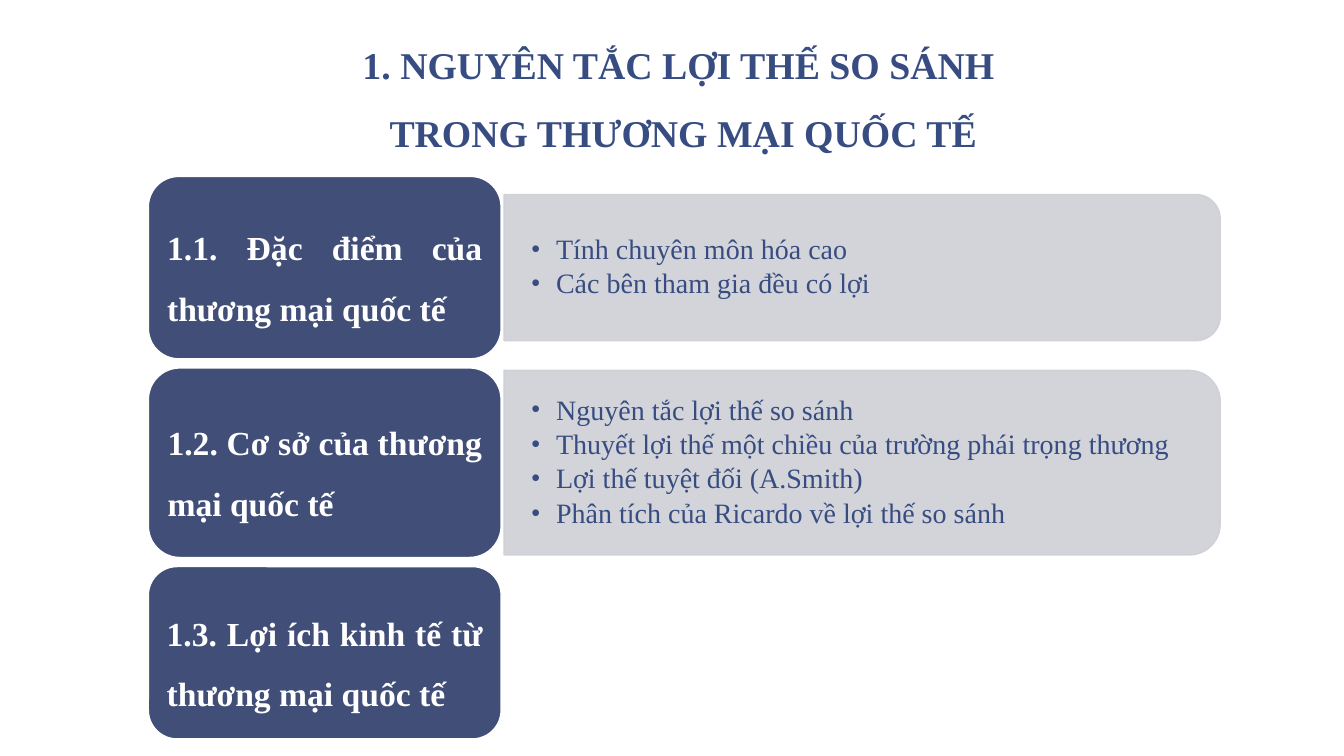
from copy import deepcopy
from dataclasses import dataclass

from lxml import etree
from pptx import Presentation
from pptx.dml.color import RGBColor
from pptx.enum.shapes import MSO_SHAPE
from pptx.enum.text import MSO_ANCHOR, MSO_AUTO_SIZE, PP_ALIGN
from pptx.oxml.ns import qn
from pptx.util import Pt

ROUNDED, ROUNDED_TOP = MSO_SHAPE.ROUNDED_RECTANGLE, MSO_SHAPE.ROUND_2_SAME_RECTANGLE
MIDDLE, BOTTOM = MSO_ANCHOR.MIDDLE, MSO_ANCHOR.BOTTOM
CENTER, JUSTIFY, LEFT = PP_ALIGN.CENTER, PP_ALIGN.JUSTIFY, PP_ALIGN.LEFT
NO_AUTOFIT = MSO_AUTO_SIZE.NONE


@dataclass(frozen=True)
class Theme:
    font: str = "Times New Roman"
    ink: str = "374C81"
    card: str = "414E77"
    panel: str = "CFD0D6"
    white: str = "FFFFFF"
    title_size: int = 27
    card_size: int = 24
    list_size: int = 20
    panel_alpha: int = 90


class SlideBuilder:
    def __init__(self, slide, theme):
        self.slide = slide
        self.theme = theme

    def format_frame(self, frame, anchor, side, end):
        frame.word_wrap = True
        frame.auto_size = NO_AUTOFIT
        frame.vertical_anchor = anchor
        frame.margin_left = frame.margin_right = Pt(side)
        frame.margin_top = frame.margin_bottom = Pt(end)

    def format_para(self, para, size, color, align, spacing, after=0, bold=False):
        para.alignment = align
        para.line_spacing = spacing
        para.space_before = Pt(0)
        para.space_after = Pt(after)
        for span in para.runs:
            span.font.name = self.theme.font
            span.font.size = Pt(size)
            span.font.bold = bold
            span.font.color.rgb = RGBColor.from_string(color)

    def place(self, shape, left, top, width, height):
        shape.left, shape.top = Pt(left), Pt(top)
        shape.width, shape.height = Pt(width), Pt(height)

    def box(self, kind, left, top, width, height, fill, line):
        box = self.slide.shapes.add_shape(kind, Pt(left), Pt(top), Pt(width), Pt(height))
        box.shadow.inherit = False
        box.fill.solid()
        box.fill.fore_color.rgb = RGBColor.from_string(fill)
        box.line.color.rgb = RGBColor.from_string(line)
        box.line.width = Pt(1)
        return box

    def title(self, text, left, top, width, height):
        title = self.slide.shapes.title
        self.place(title, left, top, width, height)
        frame = title.text_frame
        frame.text = text
        self.format_frame(frame, BOTTOM, 9.4, 5)
        para = frame.paragraphs[0]
        self.format_para(para, self.theme.title_size, self.theme.ink, CENTER, 1.5, bold=True)
        # The line break takes the same type as the words around it
        for line_break in para._p.findall(qn("a:br")):
            line_break.insert(0, deepcopy(para.runs[0]._r.rPr))

    def card(self, text, left, top, width, height):
        box = self.box(ROUNDED, left, top, width, height, self.theme.card, self.theme.white)
        box.text_frame.text = text
        self.format_frame(box.text_frame, MIDDLE, 7.2, 3.6)
        self.format_para(box.text_frame.paragraphs[0], self.theme.card_size,
                         self.theme.white, JUSTIFY, 1.5, after=8.4, bold=True)

    def panel(self, left, top, width, height):
        # Drawn upright, then turned so that the rounded end points right
        shift = (width - height) / 2
        box = self.box(ROUNDED_TOP, left + shift, top - shift, height, width,
                       self.theme.panel, self.theme.panel)
        box.rotation = 90
        for color in box._element.spPr.iter(qn("a:srgbClr")):
            etree.SubElement(color, qn("a:alpha"), val=str(self.theme.panel_alpha * 1000))

    def bullets(self, index, items, left, top, width, height):
        body = self.slide.placeholders[index]
        self.place(body, left, top, width, height)
        # Bring the list in front of its panel
        self.slide.shapes._spTree.append(body._element)
        frame = body.text_frame
        frame.text = "\n".join(items)
        self.format_frame(frame, MIDDLE, 19.2, 10)
        for para in frame.paragraphs:
            self.format_para(para, self.theme.list_size, self.theme.ink, LEFT, 0.9, after=3)
            properties = para._p.get_or_add_pPr()
            properties.set("marL", str(Pt(18)))
            properties.set("indent", str(Pt(-18)))
            etree.SubElement(properties, qn("a:buFont"), typeface=self.theme.font)
            etree.SubElement(properties, qn("a:buChar"), char="•")


# Card text, card height, panel height, list items
ROWS = [
    ("1.1. Đặc điểm của thương mại quốc tế", 130.3, 104.4,
     ["Tính chuyên môn hóa cao", "Các bên tham gia đều có lợi"]),
    ("1.2. Cơ sở của thương mại quốc tế", 135.4, 131.8,
     ["Nguyên tắc lợi thế so sánh",
      "Thuyết lợi thế một chiều của trường phái trọng thương",
      "Lợi thế tuyệt đối (A.Smith)",
      "Phân tích của Ricardo về lợi thế so sánh"]),
    ("1.3. Lợi ích kinh tế từ thương mại quốc tế", 123.1, 0, []),
]
CARD_LEFT, CARD_WIDTH = 106, 252
PANEL_LEFT, PANEL_WIDTH = 360, 511.6
FIRST_TOP, ROW_GAP = 126, 6.5
CORNER_INSET = 0.05  # share of the panel height kept clear of the rounded corners


def main():
    deck = Presentation()
    deck.slide_width, deck.slide_height = Pt(960), Pt(540)
    page = deck.slides.add_slide(deck.slide_layouts.get_by_name("Two Content"))
    builder = SlideBuilder(page, Theme())

    # Heading
    builder.title("1. NGUYÊN TẮC LỢI THẾ SO SÁNH \vTRONG THƯƠNG MẠI QUỐC TẾ",
                  88, 6, 800, 110)

    # Rows: a card on the left, its list panel centred beside it
    top = FIRST_TOP
    for index, (label, height, panel_height, items) in enumerate(ROWS, start=1):
        if items:
            panel_top = top + (height - panel_height) / 2
            inset = CORNER_INSET * panel_height
            builder.panel(PANEL_LEFT, panel_top, PANEL_WIDTH, panel_height)
            builder.bullets(index, items, PANEL_LEFT, panel_top + inset,
                            PANEL_WIDTH - inset, panel_height - 2 * inset)
        builder.card(label, CARD_LEFT, top, CARD_WIDTH, height)
        top += height + ROW_GAP

    deck.save("out.pptx")


if __name__ == "__main__":
    main()
